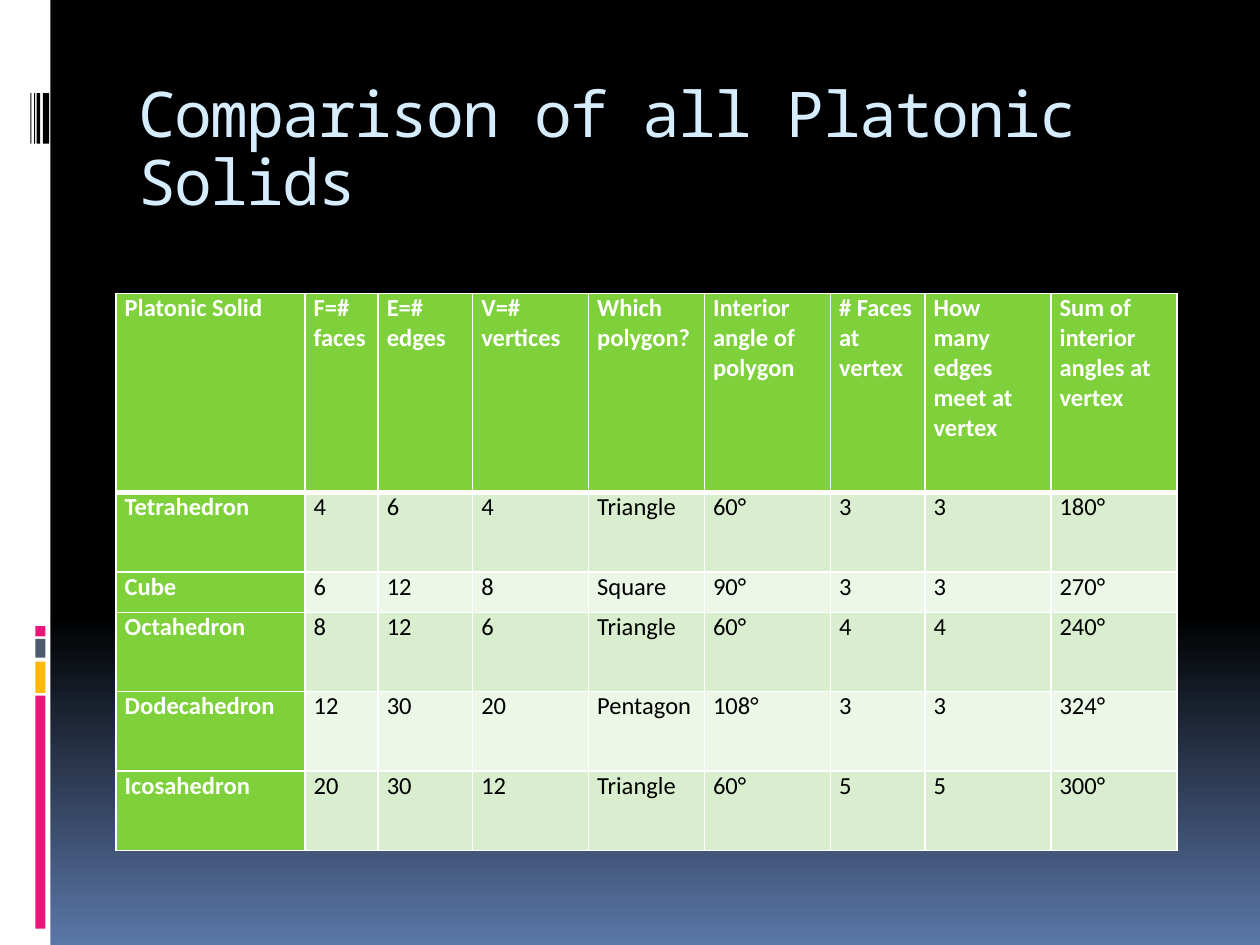
from dataclasses import dataclass

from lxml.etree import SubElement as Sub
from pptx import Presentation as Deck
from pptx.dml.color import RGBColor as Rgb
from pptx.enum.shapes import MSO_SHAPE as Form
from pptx.enum.text import MSO_ANCHOR as Anchor
from pptx.oxml.ns import qn
from pptx.slide import Slide
from pptx.table import Table
from pptx.text.text import _Paragraph as Para
from pptx.util import Inches, Pt


@dataclass(frozen=True)
class Theme:
    white: str = "FFFFFF"
    black: str = "000000"
    blue: str = "5B77A8"
    title: str = "D6ECFF"
    pink: str = "EA157A"
    gold: str = "FEB80A"
    slate: str = "4E5B6F"
    green: str = "7FD13B"
    bands: tuple[str, str] = ("D8EECE", "ECF7E8")
    mono: str = "Noto Sans Mono"
    sans: str = "Calibri"
    large: int = 36
    small: int = 14
    thin: int = 1
    thick: int = 3


@dataclass(frozen=True)
class Bar:
    left: float
    top: float
    width: float
    height: float
    color: str


THEME = Theme()

BARS = [
    Bar(0, 0, 0.4, 7.5, THEME.white),
    *(Bar(0.28, top, 0.08, height, color) for top, height, color in (
        (5.52, 1.85, THEME.pink),
        (5.25, 0.25, THEME.gold),
        (5.07, 0.15, THEME.slate),
        (4.97, 0.08, THEME.pink),
    )),
    *(Bar(left, 0.74, width, 0.4, THEME.black) for left, width in (
        (0.34, 0.05), (0.29, 0.03), (0.27, 0.01), (0.24, 0.01),
    )),
]

WIDTHS = [1.5, 0.58, 0.75, 0.92, 0.92, 1, 0.75, 1, 1]
HEIGHTS = [1.58, 0.63, 0.32, 0.63, 0.63, 0.63]
ROWS = [
    ["Platonic Solid", "F=# faces", "E=# edges", "V=# vertices",
     "Which polygon?", "Interior angle of polygon", "# Faces at vertex",
     "How many edges meet at vertex", "Sum of interior angles at vertex"],
    ["Tetrahedron", "4", "6", "4", "Triangle", "60°", "3", "3", "180°"],
    ["Cube", "6", "12", "8", "Square", "90°", "3", "3", "270°"],
    ["Octahedron", "8", "12", "6", "Triangle", "60°", "4", "4", "240°"],
    ["Dodecahedron", "12", "30", "20", "Pentagon", "108°", "3", "3", "324°"],
    ["Icosahedron", "20", "30", "12", "Triangle", "60°", "5", "5", "300°"],
]


def paint_back(slide: Slide) -> None:
    fill = slide.background.fill
    fill.gradient()
    fill.gradient_angle = 270
    stops = slide.element.find(".//" + qn("a:gsLst"))
    stops.clear()
    for place, color in ((0, THEME.black), (65, THEME.black), (100, THEME.blue)):
        stop = Sub(stops, qn("a:gs"), pos=str(place * 1000))
        Sub(stop, qn("a:srgbClr"), val=color)


def draw_bar(slide: Slide, bar: Bar) -> None:
    shape = slide.shapes.add_shape(
        Form.RECTANGLE, Inches(bar.left), Inches(bar.top),
        Inches(bar.width), Inches(bar.height))
    shape.shadow.inherit = False
    shape.fill.solid()
    shape.fill.fore_color.rgb = Rgb.from_string(bar.color)
    shape.line.fill.background()


def add_run(para: Para, text: str, font: str, size: int, color: str,
            bold: bool = False):
    run = para.add_run()
    run.text = text
    run.font.name = font
    run.font.size = Pt(size)
    run.font.bold = bold
    run.font.color.rgb = Rgb.from_string(color)
    return run


def draw_title(slide: Slide) -> None:
    box = slide.shapes.add_textbox(Inches(1), Inches(0.56), Inches(8.5), Inches(1))
    frame = box.text_frame
    frame.word_wrap = True
    frame.vertical_anchor = Anchor.TOP
    frame.margin_top = Inches(0.1)
    para = frame.paragraphs[0]
    para.line_spacing = 0.9
    run = add_run(para, "Comparison of all Platonic Solids",
                  THEME.mono, THEME.large, THEME.title)
    run.font._element.set("spc", "-100")


def draw_cell(table: Table, row: int, col: int) -> None:
    cell = table.cell(row, col)
    cell.margin_left = cell.margin_right = Inches(0.07)
    cell.margin_top = cell.margin_bottom = 0
    props = cell._tc.get_or_add_tcPr()
    for side in "LRTB":
        heavy = (row, side) in ((0, "B"), (1, "T"))
        width = Pt(THEME.thick if heavy else THEME.thin)
        line = Sub(props, qn("a:ln" + side), w=str(width))
        Sub(Sub(line, qn("a:solidFill")), qn("a:srgbClr"), val=THEME.white)
    head = row == 0 or col == 0
    cell.fill.solid()
    cell.fill.fore_color.rgb = Rgb.from_string(
        THEME.green if head else THEME.bands[(row - 1) % 2])
    add_run(cell.text_frame.paragraphs[0], ROWS[row][col], THEME.sans,
            THEME.small, THEME.white if head else THEME.black, head)


def draw_table(slide: Slide) -> None:
    table = slide.shapes.add_table(
        len(ROWS), len(WIDTHS), Inches(0.92), Inches(2.33),
        Inches(sum(WIDTHS)), Inches(sum(HEIGHTS))).table
    table.first_col = True
    for column, width in zip(table.columns, WIDTHS):
        column.width = Inches(width)
    for line, height in zip(table.rows, HEIGHTS):
        line.height = Inches(height)
    for row in range(len(ROWS)):
        for col in range(len(WIDTHS)):
            draw_cell(table, row, col)


def main() -> None:
    deck = Deck()
    deck.slide_width, deck.slide_height = Inches(10), Inches(7.5)
    slide = deck.slides.add_slide(deck.slide_layouts[6])
    paint_back(slide)
    for bar in BARS:
        draw_bar(slide, bar)
    draw_title(slide)
    draw_table(slide)
    deck.save("out.pptx")


if __name__ == "__main__":
    main()
